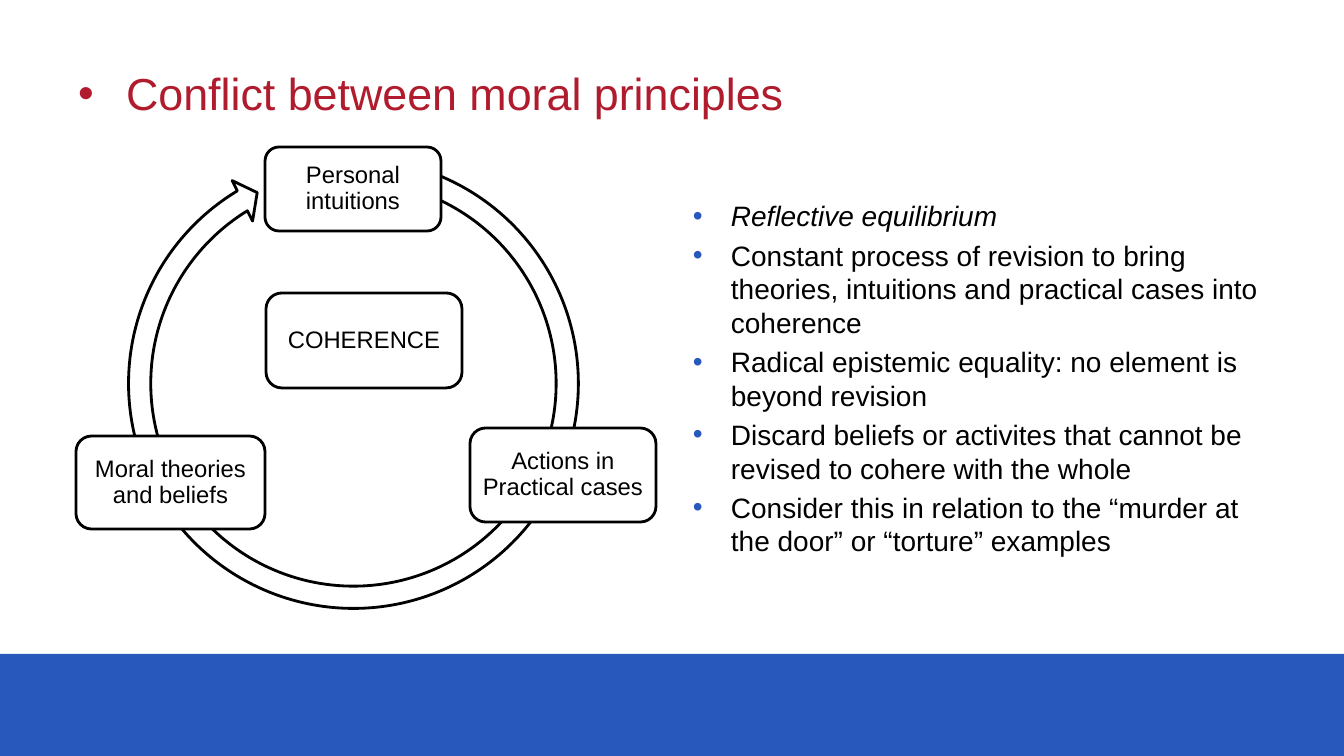
from dataclasses import dataclass

from lxml import etree
from pptx import Presentation
from pptx.dml.color import RGBColor
from pptx.enum.shapes import MSO_SHAPE
from pptx.enum.text import MSO_ANCHOR, MSO_AUTO_SIZE, PP_ALIGN
from pptx.oxml.ns import qn
from pptx.util import Pt

RECTANGLE = MSO_SHAPE.RECTANGLE
ROUNDED = MSO_SHAPE.ROUNDED_RECTANGLE
CIRCULAR_ARROW = MSO_SHAPE.CIRCULAR_ARROW
MIDDLE = MSO_ANCHOR.MIDDLE
TOP = MSO_ANCHOR.TOP
LEFT = PP_ALIGN.LEFT
CENTER = PP_ALIGN.CENTER
NO_AUTOFIT = MSO_AUTO_SIZE.NONE
TITLE_ONLY = 5
EMU_PER_PX = 914400 / 100.8


@dataclass(frozen=True)
class Theme:
    font: str = "Arial"
    band: str = "2858BB"
    title: str = "B01C2E"
    text: str = "000000"
    paper: str = "FFFFFF"
    title_size: int = 32
    body_size: int = 20
    node_size: int = 17
    line_width: int = 2
    paragraph_gap: int = 4


def px(value):
    return round(value * EMU_PER_PX)


class SlideBuilder:
    def __init__(self, presentation, theme):
        self.theme = theme
        self.slide = presentation.slides.add_slide(presentation.slide_layouts[TITLE_ONLY])

    def style(self, paragraph, size, color, align):
        paragraph.alignment = align
        paragraph.font.name = self.theme.font
        paragraph.font.size = Pt(size)
        paragraph.font.color.rgb = RGBColor.from_string(color)

    def bullet(self, paragraph, indent, color):
        properties = paragraph._p.get_or_add_pPr()
        properties.set("marL", str(px(indent)))
        properties.set("indent", str(-px(indent)))
        bullet_color = etree.SubElement(properties, qn("a:buClr"))
        etree.SubElement(bullet_color, qn("a:srgbClr"), val=color)
        etree.SubElement(properties, qn("a:buFont"), typeface=self.theme.font)
        etree.SubElement(properties, qn("a:buChar"), char="•")

    def title(self, text, left, top, width, height, indent):
        shape = self.slide.shapes.title
        shape.left, shape.top, shape.width, shape.height = map(px, (left, top, width, height))
        frame = shape.text_frame
        frame.text = text
        frame.auto_size = NO_AUTOFIT
        frame.vertical_anchor = MIDDLE
        paragraph = frame.paragraphs[0]
        self.bullet(paragraph, indent, self.theme.title)
        self.style(paragraph, self.theme.title_size, self.theme.title, LEFT)

    def shape(self, kind, left, top, width, height, fill, outlined=True):
        shape = self.slide.shapes.add_shape(kind, *map(px, (left, top, width, height)))
        shape.shadow.inherit = False
        shape.fill.solid()
        shape.fill.fore_color.rgb = RGBColor.from_string(fill)
        if outlined:
            shape.line.color.rgb = RGBColor.from_string(self.theme.text)
            shape.line.width = Pt(self.theme.line_width)
        else:
            shape.line.fill.background()
        return shape

    def cycle_arrow(self, left, top, size, adjustments):
        arrow = self.shape(CIRCULAR_ARROW, left, top, size, size, self.theme.paper)
        for index, value in enumerate(adjustments):
            arrow.adjustments[index] = value

    def node(self, text, left, top, width, height):
        frame = self.shape(ROUNDED, left, top, width, height, self.theme.paper).text_frame
        frame.word_wrap = True
        frame.vertical_anchor = MIDDLE
        frame.margin_left = frame.margin_right = px(7)
        frame.margin_top = frame.margin_bottom = px(7)
        frame.text = text
        paragraph = frame.paragraphs[0]
        paragraph.line_spacing = 0.9
        self.style(paragraph, self.theme.node_size, self.theme.text, CENTER)

    def bullet_list(self, items, left, top, width, height, indent):
        frame = self.slide.shapes.add_textbox(*map(px, (left, top, width, height))).text_frame
        frame.word_wrap = True
        frame.vertical_anchor = TOP
        frame.text = "\n".join(items)
        for index, paragraph in enumerate(frame.paragraphs):
            self.bullet(paragraph, indent, self.theme.band)
            self.style(paragraph, self.theme.body_size, self.theme.text, LEFT)
            paragraph.font.italic = index == 0
            if index:
                paragraph.space_before = Pt(self.theme.paragraph_gap)


def main():
    presentation = Presentation()
    presentation.slide_width = px(1344)
    presentation.slide_height = px(756)
    theme = Theme()
    builder = SlideBuilder(presentation, theme)

    builder.shape(RECTANGLE, 0, 654, 1344, 102, theme.band, outlined=False)
    builder.title("Conflict between moral principles", 68, 30, 1210, 126, 48)
    builder.cycle_arrow(117, 147, 473, (0.047, 2.73, 143.21, 170.96, 0.048))

    nodes = (
        ("Personal intuitions", 265, 147, 176, 84),
        ("Actions in Practical cases", 470, 428, 186, 94),
        ("COHERENCE", 266, 293, 196, 95),
        ("Moral theories and beliefs", 76, 436, 189, 93),
    )
    for node in nodes:
        builder.node(*node)

    points = (
        "Reflective equilibrium",
        "Constant process of revision to bring theories, intuitions and practical cases into coherence",
        "Radical epistemic equality: no element is beyond revision",
        "Discard beliefs or activites that cannot be revised to cohere with the whole",
        "Consider this in relation to the “murder at the door” or “torture” examples",
    )
    builder.bullet_list(points, 683, 194, 594, 450, 38)
    presentation.save("out.pptx")


if __name__ == "__main__":
    main()
